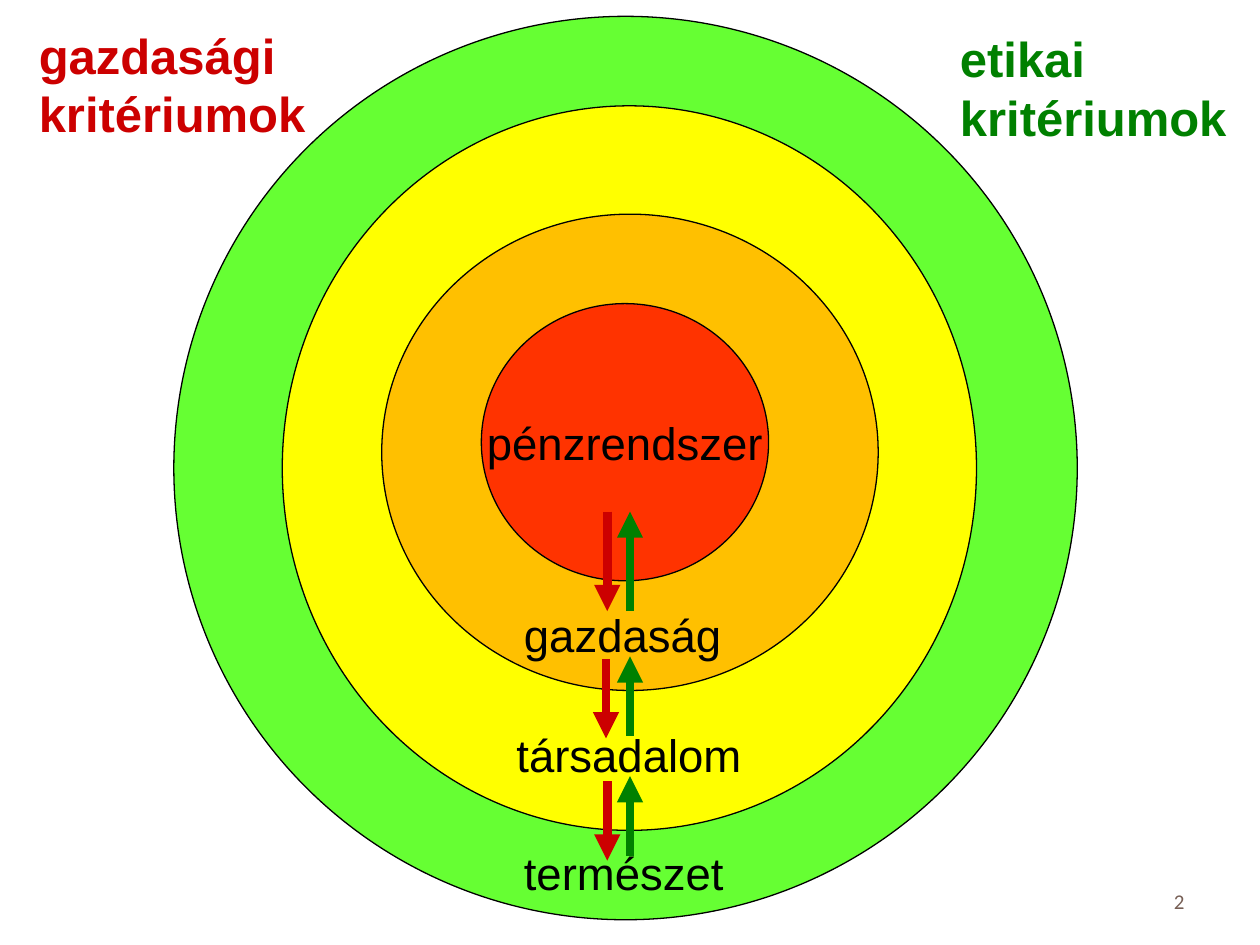
from dataclasses import dataclass

from lxml import etree
from pptx import Presentation
from pptx.dml.color import RGBColor
from pptx.enum.shapes import MSO_CONNECTOR, MSO_SHAPE
from pptx.enum.text import MSO_ANCHOR, MSO_AUTO_SIZE, PP_ALIGN
from pptx.oxml.ns import qn
from pptx.util import Inches, Pt

ELLIPSE = MSO_SHAPE.OVAL
STRAIGHT = MSO_CONNECTOR.STRAIGHT
LEFT, CENTER, RIGHT = PP_ALIGN.LEFT, PP_ALIGN.CENTER, PP_ALIGN.RIGHT
TOP, MIDDLE = MSO_ANCHOR.TOP, MSO_ANCHOR.MIDDLE
FIT_SHAPE = MSO_AUTO_SIZE.SHAPE_TO_FIT_TEXT
BLANK_LAYOUT = 6
COLS, ROWS = 100, 75


@dataclass(frozen=True)
class Theme:
    nature: str = "66FF33"
    society: str = "FFFF00"
    economy: str = "FFC000"
    finance: str = "FF3300"
    ink: str = "000000"
    economic: str = "CC0000"
    ethical: str = "008000"
    muted: str = "775F55"
    font: str = "Arial"
    number_font: str = "Calibri"
    heading_size: float = 28
    label_size: float = 26
    number_size: float = 12
    outline: float = 0.75
    arrow: float = 5


class Builder:
    """Draws on one slide; lengths are columns and rows of the grid."""

    def __init__(self, prs, theme):
        self.theme = theme
        self.s = prs.slides.add_slide(prs.slide_layouts[BLANK_LAYOUT])
        self.col = prs.slide_width / COLS
        self.row = prs.slide_height / ROWS

    def place(self, x, y):
        return round(x * self.col), round(y * self.row)

    def add_lines(self, tf, lines, size, color, bold=False, align=LEFT,
                  anchor=TOP, font=None, wrap=False):
        tf.word_wrap = wrap
        tf.vertical_anchor = anchor
        for i, line in enumerate(lines):
            p = tf.paragraphs[0] if i == 0 else tf.add_paragraph()
            p.alignment = align
            r = p.add_run()
            r.text = line
            r.font.name = font or self.theme.font
            r.font.size = Pt(size)
            r.font.bold = bold
            r.font.color.rgb = RGBColor.from_string(color)

    def ring(self, x, y, w, h, fill):
        sp = self.s.shapes.add_shape(ELLIPSE, *self.place(x, y), *self.place(w, h))
        sp.shadow.inherit = False
        sp.fill.solid()
        sp.fill.fore_color.rgb = RGBColor.from_string(fill)
        sp.line.color.rgb = RGBColor.from_string(self.theme.ink)
        sp.line.width = Pt(self.theme.outline)
        return sp

    def text(self, x, y, w, h, lines, size, color, **style):
        sp = self.s.shapes.add_textbox(*self.place(x, y), *self.place(w, h))
        self.add_lines(sp.text_frame, lines, size, color, **style)
        return sp

    def label(self, x, y, w, h, lines, size, color, **style):
        sp = self.text(x, y, w, h, lines, size, color, **style)
        sp.text_frame.auto_size = FIT_SHAPE

    def arrow(self, x, y_from, y_to, color):
        cx = self.s.shapes.add_connector(
            STRAIGHT, *self.place(x, y_from), *self.place(x, y_to))
        cx.line.color.rgb = RGBColor.from_string(color)
        cx.line.width = Pt(self.theme.arrow)
        props = cx.element.spPr
        etree.SubElement(props.find(qn("a:ln")), qn("a:tailEnd"), type="triangle")
        etree.SubElement(props, qn("a:effectLst"))


def main():
    prs = Presentation()
    prs.slide_width, prs.slide_height = Inches(10), Inches(7.5)
    t = Theme()
    b = Builder(prs, t)

    # Nested systems, from the outermost ring inwards
    for x, y, w, h, fill in (
        (13.8, 1.3, 71.7, 71.7, t.nature),
        (22.4, 8.4, 55.1, 57.5, t.society),
        (30.3, 17, 39.4, 37.8, t.economy),
        (38.2, 24.1, 22.8, 22, t.finance),
    ):
        core = b.ring(x, y, w, h, fill)
    b.add_lines(core.text_frame, ["pénzrendszer"], t.label_size, t.ink,
                align=CENTER, anchor=MIDDLE)

    # Names of the outer rings
    for x, y, w, name in (
        (40.6, 47.7, 17.9, "gazdaság"),
        (40, 57.2, 20.1, "társadalom"),
        (40.6, 66.6, 18, "természet"),
    ):
        b.label(x, y, w, 5.4, [name], t.label_size, t.ink)

    # Economic criteria point outwards, ethical criteria inwards
    for x, start, end in ((48.2, 40.6, 48.5), (48.1, 52.3, 58.6), (48.2, 62, 68.3)):
        b.arrow(x, start, end, t.economic)
    for start, end in ((48.5, 40.6), (58.4, 52.1), (67.9, 61.6)):
        b.arrow(50, start, end, t.ethical)

    # Criteria headings
    for x, y, w, kind, color in (
        (2.1, 1.5, 23.4, "gazdasági", t.economic),
        (75.2, 1.8, 23.2, "etikai", t.ethical),
    ):
        b.label(x, y, w, 10.4, [kind, "kritériumok"], t.heading_size, color, bold=True)

    # Slide number
    b.text(71.7, 69.5, 23.3, 4, ["2"], t.number_size, t.muted, align=RIGHT,
           anchor=MIDDLE, font=t.number_font, wrap=True)

    prs.save("out.pptx")


if __name__ == "__main__":
    main()
